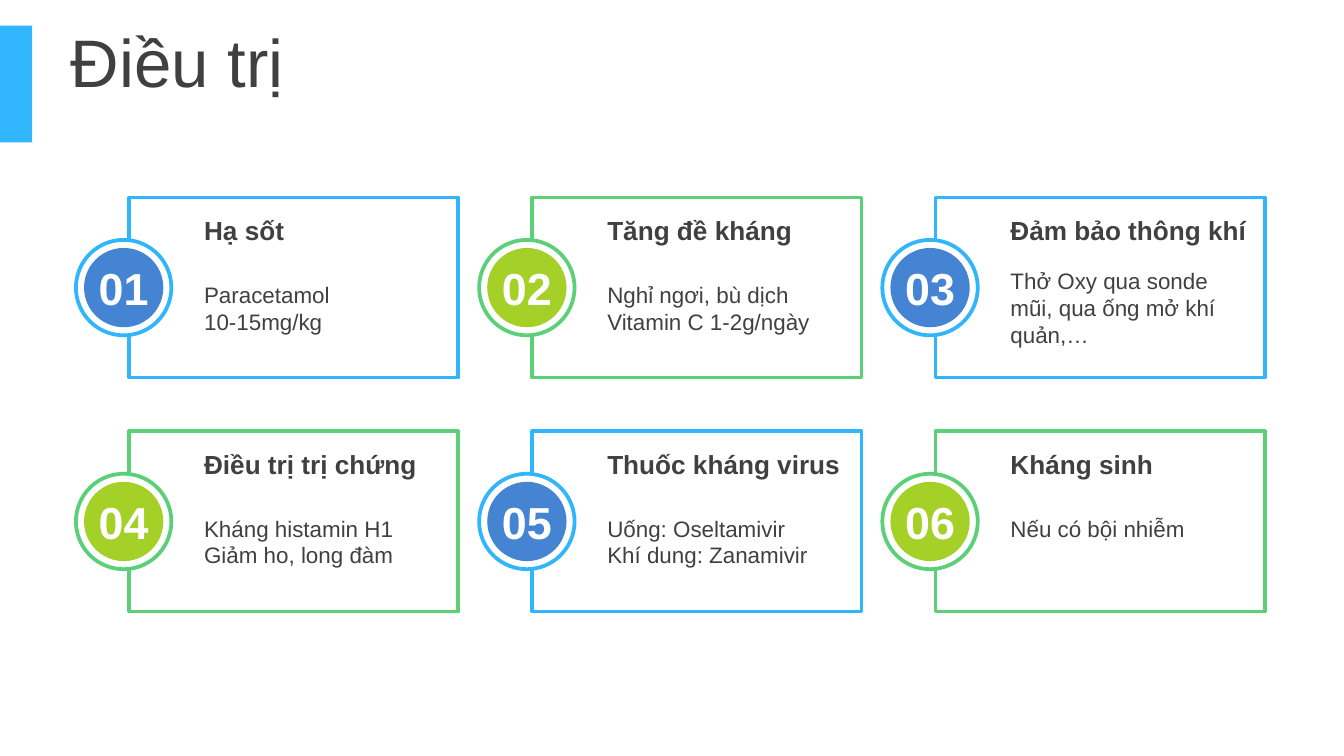
from pptx import Presentation
from pptx.dml.color import RGBColor
from pptx.enum.shapes import MSO_SHAPE
from pptx.enum.text import MSO_ANCHOR, PP_ALIGN
from pptx.util import Inches, Pt

RECTANGLE, OVAL = MSO_SHAPE.RECTANGLE, MSO_SHAPE.OVAL
MIDDLE = MSO_ANCHOR.MIDDLE
LEFT, CENTER = PP_ALIGN.LEFT, PP_ALIGN.CENTER

SKY = RGBColor(0x31, 0xB6, 0xFD)
GREEN = RGBColor(0x5B, 0xD0, 0x78)
BLUE = RGBColor(0x45, 0x84, 0xD3)
LIME = RGBColor(0xA5, 0xD0, 0x28)
DARK = RGBColor(0x40, 0x40, 0x40)
WHITE = RGBColor(0xFF, 0xFF, 0xFF)

COLUMNS = 3
COLUMN_STEP, ROW_STEP = 3.0, 1.74
FRAME_LEFT, FRAME_TOP = 0.96, 1.47
FRAME_WIDTH, FRAME_HEIGHT = 2.45, 1.34
RING, DISC = 0.71, 0.59

# Heading, paragraphs, number of lines, width of the body text
TREATMENTS = [
    ("Hạ sốt", ["Paracetamol", "10-15mg/kg"], 2, 1.99),
    ("Tăng đề kháng", ["Nghỉ ngơi, bù dịch", "Vitamin C 1-2g/ngày"], 2, 1.99),
    ("Đảm bảo thông khí",
     ["Thở Oxy qua sonde mũi, qua ống mở khí quản,…"], 3, 1.84),
    ("Điều trị trị chứng", ["Kháng histamin H1", "Giảm ho, long đàm"], 2, 1.99),
    ("Thuốc kháng virus",
     ["Uống: Oseltamivir", "Khí dung: Zanamivir"], 2, 1.99),
    ("Kháng sinh", ["Nếu có bội nhiễm"], 1, 1.99),
]


class Deck:
    """Holds the text style and the current slide."""

    font = "Arial"
    line_width = Pt(2)

    def __init__(self, slide):
        self.slide = slide

    def shape(self, kind, left, top, width, height, fill, line=None):
        shape = self.slide.shapes.add_shape(
            kind, Inches(left), Inches(top), Inches(width), Inches(height))
        shape.shadow.inherit = False
        shape.fill.solid()
        shape.fill.fore_color.rgb = fill
        if line is None:
            shape.line.fill.background()
        else:
            shape.line.color.rgb = line
            shape.line.width = self.line_width

    def circle(self, center_x, center_y, size, fill, line=None):
        self.shape(OVAL, center_x - size / 2, center_y - size / 2,
                   size, size, fill, line)

    def text(self, left, top, width, height, paragraphs, size,
             color=DARK, bold=False, align=LEFT, wrap=True):
        box = self.slide.shapes.add_textbox(
            Inches(left), Inches(top), Inches(width), Inches(height))
        frame = box.text_frame
        frame.word_wrap = wrap
        frame.vertical_anchor = MIDDLE
        for index, content in enumerate(paragraphs):
            paragraph = frame.add_paragraph() if index else frame.paragraphs[0]
            paragraph.alignment = align
            run = paragraph.add_run()
            run.text = content
            run.font.name = self.font
            run.font.size = Pt(size)
            run.font.bold = bold
            run.font.color.rgb = color

    def card(self, number, left, top, treatment, outline, accent):
        heading, body, lines, body_width = treatment
        self.shape(RECTANGLE, left, top, FRAME_WIDTH, FRAME_HEIGHT,
                   WHITE, outline)

        # Heading and body; a single line sits where the first of two would
        text_left = left + 0.46
        self.text(text_left, top + 0.07, 1.99, 0.34, [heading], 14, bold=True)
        body_top = top + 0.77 - 0.1 * max(lines, 2)
        self.text(text_left, body_top, body_width, 0.1 + 0.2 * lines, body, 12)

        # Number badge over the left side
        center_x, center_y = left - 0.04, top + FRAME_HEIGHT / 2
        self.circle(center_x, center_y, RING, WHITE, outline)
        self.circle(center_x, center_y, DISC, accent)
        self.text(center_x - 0.29, center_y - 0.25, 0.58, 0.5,
                  [f"{number:02d}"], 24, WHITE, True, CENTER, False)


def main():
    presentation = Presentation()
    # Widescreen, 16:9
    presentation.slide_width = Inches(10)
    presentation.slide_height = Inches(10) * 9 // 16
    deck = Deck(presentation.slides.add_slide(presentation.slide_layouts[6]))

    # Title with side bar
    deck.shape(RECTANGLE, 0, 0.19, 0.24, 0.87, SKY)
    deck.text(0.43, 0.14, 7.64, 0.63, ["Điều trị"], 36)

    # Cards in a grid, colours alternating
    for index, treatment in enumerate(TREATMENTS):
        row, column = divmod(index, COLUMNS)
        outline, accent = (GREEN, LIME) if index % 2 else (SKY, BLUE)
        deck.card(index + 1, FRAME_LEFT + column * COLUMN_STEP,
                  FRAME_TOP + row * ROW_STEP, treatment, outline, accent)

    presentation.save("out.pptx")


if __name__ == "__main__":
    main()
